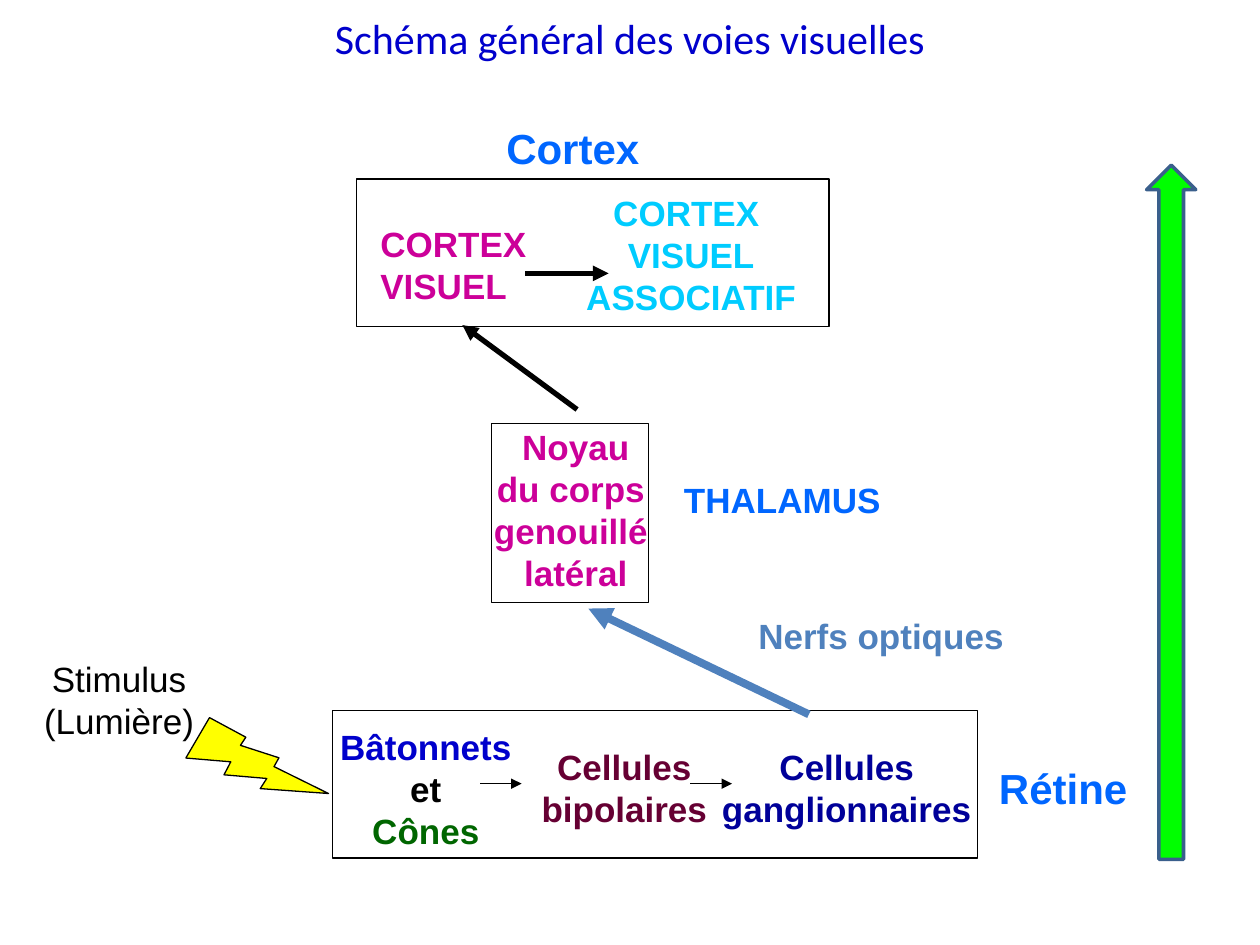
from lxml import etree
from pptx import Presentation
from pptx.dml.color import RGBColor
from pptx.enum.shapes import MSO_CONNECTOR, MSO_SHAPE
from pptx.enum.text import MSO_ANCHOR, MSO_AUTO_SIZE, PP_ALIGN
from pptx.oxml.ns import qn
from pptx.util import Inches, Pt

LEFT, CENTER = PP_ALIGN.LEFT, PP_ALIGN.CENTER
MIDDLE = MSO_ANCHOR.MIDDLE
GROW = MSO_AUTO_SIZE.SHAPE_TO_FIT_TEXT
STRAIGHT = MSO_CONNECTOR.STRAIGHT
RECTANGLE, BOLT, DOWN_ARROW = MSO_SHAPE.RECTANGLE, MSO_SHAPE.LIGHTNING_BOLT, MSO_SHAPE.DOWN_ARROW
COLORS = {
    "black": "000000", "blue": "0000CC", "navy": "000099", "azure": "0066FF",
    "steel": "4F81BD", "slate": "3A5F8C", "cyan": "00CCFF", "magenta": "CC0099",
    "wine": "660033", "forest": "006600", "yellow": "FFFF00", "green": "00FF00",
}


def color(name):
    return RGBColor.from_string(COLORS[name])


def format_paragraph(paragraph, text, size, font, ink, bold, align):
    paragraph.text = text
    paragraph.alignment = align
    paragraph.font.size = Pt(size)
    paragraph.font.name = font
    paragraph.font.bold = bold
    paragraph.font.color.rgb = color(ink)


deck = Presentation()
deck.slide_width, deck.slide_height = Inches(10), Inches(7.5)
page = deck.slides.add_slide(deck.slide_layouts[5])

title = page.shapes.title
title.left, title.top = Inches(0.75), Inches(-0.08)
title.width, title.height = Inches(8.5), Inches(0.76)
title.text_frame.vertical_anchor = MIDDLE
format_paragraph(title.text_frame.paragraphs[0], "Schéma général des voies visuelles",
                 24, "Calibri", "blue", False, CENTER)

shapes = [
    (RECTANGLE, 3.9, 3.36, 1.25, 1.42, 0, None, "black", 0.75),
    (RECTANGLE, 2.64, 5.64, 5.12, 1.17, 0, None, "black", 0.75),
    (RECTANGLE, 2.83, 1.42, 3.75, 1.17, 0, None, "black", 0.75),
    (BOLT, 1.58, 5.58, 0.83, 1, 329.3, "yellow", "black", 0.75),
    (DOWN_ARROW, 9.1, 1.31, 0.39, 5.51, 180, "green", "slate", 2),
]
for kind, left, top, width, height, rotation, fill, line, weight in shapes:
    shape = page.shapes.add_shape(kind, Inches(left), Inches(top), Inches(width), Inches(height))
    shape.shadow.inherit = False
    shape.rotation = rotation
    if fill:
        shape.fill.solid()
        shape.fill.fore_color.rgb = color(fill)
    else:
        shape.fill.background()
    shape.line.color.rgb = color(line)
    shape.line.width = Pt(weight)

labels = [
    (0.25, 5.17, 1.39, 0.77, 20, False, CENTER, [("Stimulus", "black"), ("(Lumière)", "black")]),
    (5.92, 4.83, 2.15, 0.43, 20, True, LEFT, [("Nerfs optiques", "steel")]),
    (3.82, 3.33, 1.5, 1.43, 20, True, CENTER,
     [("Noyau", "magenta"), ("du corps ", "magenta"), ("genouillé ", "magenta"), ("latéral", "magenta")]),
    (7.83, 6, 1.22, 0.5, 24, True, LEFT, [("Rétine", "azure")]),
    (5.33, 3.75, 1.76, 0.43, 20, True, LEFT, [("THALAMUS", "azure")]),
    (2.6, 5.71, 1.56, 1.1, 20, True, CENTER,
     [("Bâtonnets", "blue"), ("et", "black"), ("Cônes", "forest")]),
    (4.17, 5.87, 1.57, 0.77, 20, True, CENTER, [("Cellules", "wine"), ("bipolaires", "wine")]),
    (5.62, 5.87, 2.2, 0.77, 20, True, CENTER, [("Cellules", "navy"), ("ganglionnaires", "navy")]),
    (2.92, 1.72, 1.44, 0.77, 20, True, LEFT, [("CORTEX", "magenta"), ("VISUEL", "magenta")]),
    (4.54, 1.47, 1.89, 1.1, 20, True, CENTER,
     [("CORTEX ", "cyan"), ("VISUEL", "cyan"), ("ASSOCIATIF", "cyan")]),
    (3.92, 0.92, 1.26, 0.5, 24, True, LEFT, [("Cortex", "azure")]),
]
for left, top, width, height, size, bold, align, lines in labels:
    box = page.shapes.add_textbox(Inches(left), Inches(top), Inches(width), Inches(height))
    frame = box.text_frame
    frame.word_wrap = False
    frame.auto_size = GROW
    for index, (text, ink) in enumerate(lines):
        paragraph = frame.add_paragraph() if index else frame.paragraphs[0]
        format_paragraph(paragraph, text, size, "Arial", ink, bold, align)

arrows = [
    (3.81, 6.22, 4.14, 6.22, "black", 0.75),
    (5.48, 6.22, 5.81, 6.22, "black", 0.75),
    (6.42, 5.67, 4.67, 4.83, "steel", 4.5),
    (4.58, 3.25, 3.67, 2.58, "black", 3),
    (4.17, 2.17, 4.83, 2.17, "black", 3),
]
for start_x, start_y, end_x, end_y, ink, weight in arrows:
    arrow = page.shapes.add_connector(STRAIGHT, Inches(start_x), Inches(start_y),
                                      Inches(end_x), Inches(end_y))
    arrow.line.color.rgb = color(ink)
    arrow.line.width = Pt(weight)
    etree.SubElement(arrow.line._get_or_add_ln(), qn("a:tailEnd"), type="triangle")
    etree.SubElement(arrow._element.spPr, qn("a:effectLst"))

deck.save("out.pptx")
